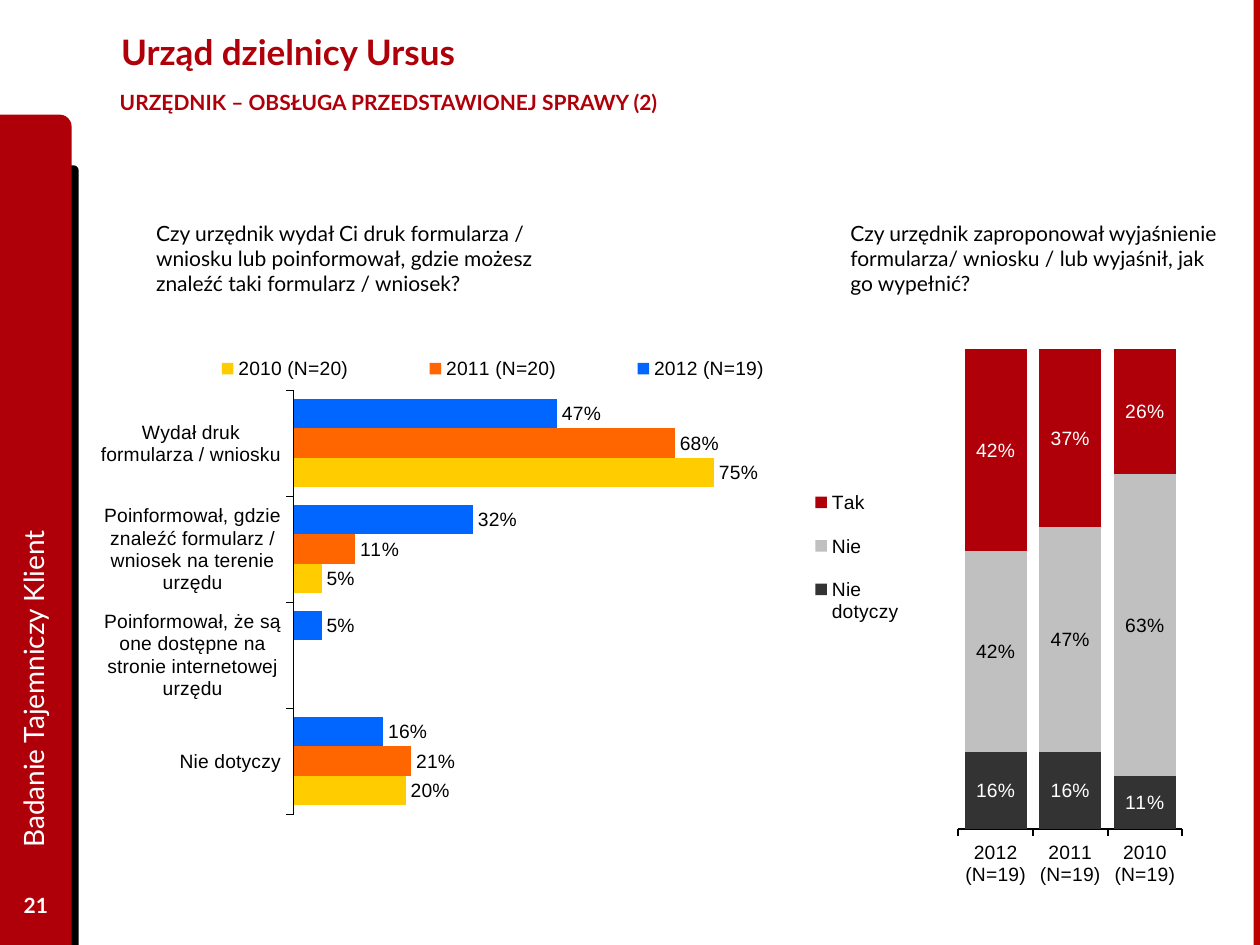
from lxml import etree
from pptx import Presentation
from pptx.chart.data import CategoryChartData
from pptx.dml.color import RGBColor
from pptx.enum.chart import XL_CHART_TYPE, XL_LABEL_POSITION, XL_LEGEND_POSITION, XL_TICK_MARK
from pptx.enum.shapes import MSO_SHAPE
from pptx.enum.text import MSO_ANCHOR, MSO_AUTO_SIZE, PP_ALIGN
from pptx.oxml.ns import qn
from pptx.util import Pt

BAR = XL_CHART_TYPE.BAR_CLUSTERED
STACKED = XL_CHART_TYPE.COLUMN_STACKED_100
LABEL_CENTER = XL_LABEL_POSITION.CENTER
LABEL_OUTSIDE = XL_LABEL_POSITION.OUTSIDE_END
LEGEND_LEFT = XL_LEGEND_POSITION.LEFT
LEGEND_RIGHT = XL_LEGEND_POSITION.RIGHT
TICK_OUTSIDE = XL_TICK_MARK.OUTSIDE
TICK_NONE = XL_TICK_MARK.NONE
RECTANGLE = MSO_SHAPE.RECTANGLE
ROUNDED_CORNER = MSO_SHAPE.ROUND_1_RECTANGLE
TOP = MSO_ANCHOR.TOP
MIDDLE = MSO_ANCHOR.MIDDLE
NO_AUTOSIZE = MSO_AUTO_SIZE.NONE
LEFT = PP_ALIGN.LEFT
CENTER = PP_ALIGN.CENTER

BLACK = RGBColor(0x00, 0x00, 0x00)
WHITE = RGBColor(0xFF, 0xFF, 0xFF)
RED = RGBColor(0xAF, 0x00, 0x0A)
STRIPE_RED = RGBColor(0xBD, 0x00, 0x00)
DARK_GRAY = RGBColor(0x33, 0x33, 0x33)
LIGHT_GRAY = RGBColor(0xC0, 0xC0, 0xC0)
BLUE = RGBColor(0x00, 0x66, 0xFF)
ORANGE = RGBColor(0xFF, 0x66, 0x00)
YELLOW = RGBColor(0xFF, 0xCC, 0x00)

TEXT_FONT = "Lato"
CHART_FONT = "Arial"


def points(*values):
    return [Pt(value) for value in values]


def add_panel(page, kind, color, *place):
    panel = page.shapes.add_shape(kind, *points(*place))
    panel.shadow.inherit = False
    panel.fill.solid()
    panel.fill.fore_color.rgb = color
    panel.line.fill.background()


def write_text(box, text, size, color, bold=False, align=LEFT, anchor=TOP):
    frame = box.text_frame
    frame.word_wrap = True
    frame.auto_size = NO_AUTOSIZE
    frame.vertical_anchor = anchor
    para = frame.paragraphs[0]
    para.alignment = align
    span = para.add_run()
    span.text = text
    span.font.name = TEXT_FONT
    span.font.size = Pt(size)
    span.font.bold = bold
    span.font.color.rgb = color


def add_text(page, place, text, size, color, **style):
    box = page.shapes.add_textbox(*points(*place))
    write_text(box, text, size, color, **style)
    return box


def add_title(page, text):
    title = page.shapes.title
    title.left, title.top, title.width, title.height = points(62, 3.6, 559.4, 51.8)
    write_text(title, text, 20, RED, bold=True, anchor=MIDDLE)


def set_layout(parent, position, place, inner=False):
    for old in parent.findall(qn("c:layout")):
        parent.remove(old)
    layout = etree.Element(qn("c:layout"))
    manual = etree.SubElement(layout, qn("c:manualLayout"))
    settings = [("xMode", "edge"), ("yMode", "edge"), *zip("xywh", place)]
    if inner:
        settings.insert(0, ("layoutTarget", "inner"))
    for name, value in settings:
        etree.SubElement(manual, qn(f"c:{name}")).set("val", str(value))
    parent.insert(position, layout)


def add_chart(page, kind, place, categories, series, plot_place, legend_side,
              legend_place, gap, overlap, label_position, axis_width):
    data = CategoryChartData(number_format="0%")
    data.categories = categories
    for name, values, _, _ in series:
        data.add_series(name, values)
    chart = page.shapes.add_chart(kind, *points(*place), data).chart
    chart.has_title = False
    chart.font.name = CHART_FONT
    chart.font.size = Pt(11)
    chart.font.color.rgb = BLACK

    chart.has_legend = True
    chart.legend.position = legend_side
    chart.legend.include_in_layout = False
    set_layout(chart.legend._element, 1, legend_place)
    set_layout(chart._chartSpace.chart.plotArea, 0, plot_place, inner=True)

    plot = chart.plots[0]
    plot.vary_by_categories = False
    plot.gap_width = gap
    plot.overlap = overlap
    for bars, (_, _, color, label_color) in zip(plot.series, series):
        bars.format.fill.solid()
        bars.format.fill.fore_color.rgb = color
        bars.invert_if_negative = False
        labels = bars.data_labels
        labels.show_value = True
        labels.position = label_position
        labels.number_format = "0%"
        labels.number_format_is_linked = False
        labels.font.name = CHART_FONT
        labels.font.size = Pt(11)
        labels.font.color.rgb = label_color

    axis = chart.category_axis
    axis.major_tick_mark = TICK_OUTSIDE
    axis.minor_tick_mark = TICK_NONE
    axis.format.line.color.rgb = BLACK
    axis.format.line.width = Pt(axis_width)
    values = chart.value_axis
    values.visible = False
    values.has_major_gridlines = False
    values.minimum_scale = 0
    values.maximum_scale = 1
    values.major_unit = 0.2
    return chart


def add_form_chart(page):
    chart = add_chart(
        page, BAR, (57.6, 193, 430.6, 272.2),
        ["Wydał druk formularza / wniosku",
         "Poinformował, gdzie znaleźć formularz / wniosek na terenie urzędu",
         "Poinformował, że są one dostępne na stronie internetowej urzędu",
         "Nie dotyczy"],
        [("2012 (N=19)", (0.47, 0.32, 0.05, 0.16), BLUE, BLACK),
         ("2011 (N=20)", (0.68, 0.11, None, 0.21), ORANGE, BLACK),
         ("2010 (N=20)", (0.75, 0.05, None, 0.2), YELLOW, BLACK)],
        plot_place=(0.255, 0.11, 0.745, 0.89),
        legend_side=LEGEND_RIGHT, legend_place=(0.06, 0.03, 0.92, 0.07),
        gap=60, overlap=0, label_position=LABEL_OUTSIDE, axis_width=0.25)
    chart.category_axis.reverse_order = True


def add_explanation_chart(page):
    add_chart(
        page, STACKED, (445.7, 179.3, 231.8, 343.4),
        ["2012 (N=19)", "2011 (N=19)", "2010 (N=19)"],
        [("Nie dotyczy", (0.16, 0.16, 0.11), DARK_GRAY, WHITE),
         ("Nie", (0.42, 0.47, 0.63), LIGHT_GRAY, BLACK),
         ("Tak", (0.42, 0.37, 0.26), RED, WHITE)],
        plot_place=(0.44, 0.059, 0.552, 0.798),
        legend_side=LEGEND_LEFT, legend_place=(0.06, 0.26, 0.26, 0.29),
        gap=20, overlap=100, label_position=LABEL_CENTER, axis_width=1.17)


def main():
    deck = Presentation()
    deck.slide_width, deck.slide_height = points(720, 540)
    page = deck.slides.add_slide(deck.slide_layouts[5])

    add_panel(page, ROUNDED_CORNER, BLACK, 28, 94.5, 17, 445.5)
    add_panel(page, ROUNDED_CORNER, RED, 0, 65.5, 41, 474.5)
    add_panel(page, RECTANGLE, STRIPE_RED, 716.4, 0, 3.6, 540)

    add_title(page, "Urząd dzielnicy Ursus")
    subtitle = add_text(page, (54, 47.5, 277.2, 23.8),
                        "URZĘDNIK – OBSŁUGA PRZEDSTAWIONEJ SPRAWY (2)",
                        12, RED, bold=True)
    subtitle.text_frame.word_wrap = False
    subtitle.text_frame.margin_left = subtitle.text_frame.margin_right = Pt(14.4)

    add_text(page, (478.8, 122.4, 226.8, 51.1),
             "Czy urzędnik zaproponował wyjaśnienie formularza/ wniosku / "
             "lub wyjaśnił, jak go wypełnić?", 12, BLACK)
    add_text(page, (82.1, 122.4, 265.7, 51.1),
             "Czy urzędnik wydał Ci druk formularza / wniosku lub poinformował, "
             "gdzie możesz znaleźć taki formularz / wniosek?", 12, BLACK)
    add_explanation_chart(page)
    add_form_chart(page)

    add_text(page, (0, 502.6, 41, 28.8), "21", 12, WHITE,
             bold=True, align=CENTER, anchor=MIDDLE)
    study = add_text(page, (-188.6, 265.7, 414.7, 36.7),
                     "Badanie Tajemniczy Klient", 16, WHITE, anchor=MIDDLE)
    study.rotation = 270
    deck.save("out.pptx")


if __name__ == "__main__":
    main()
